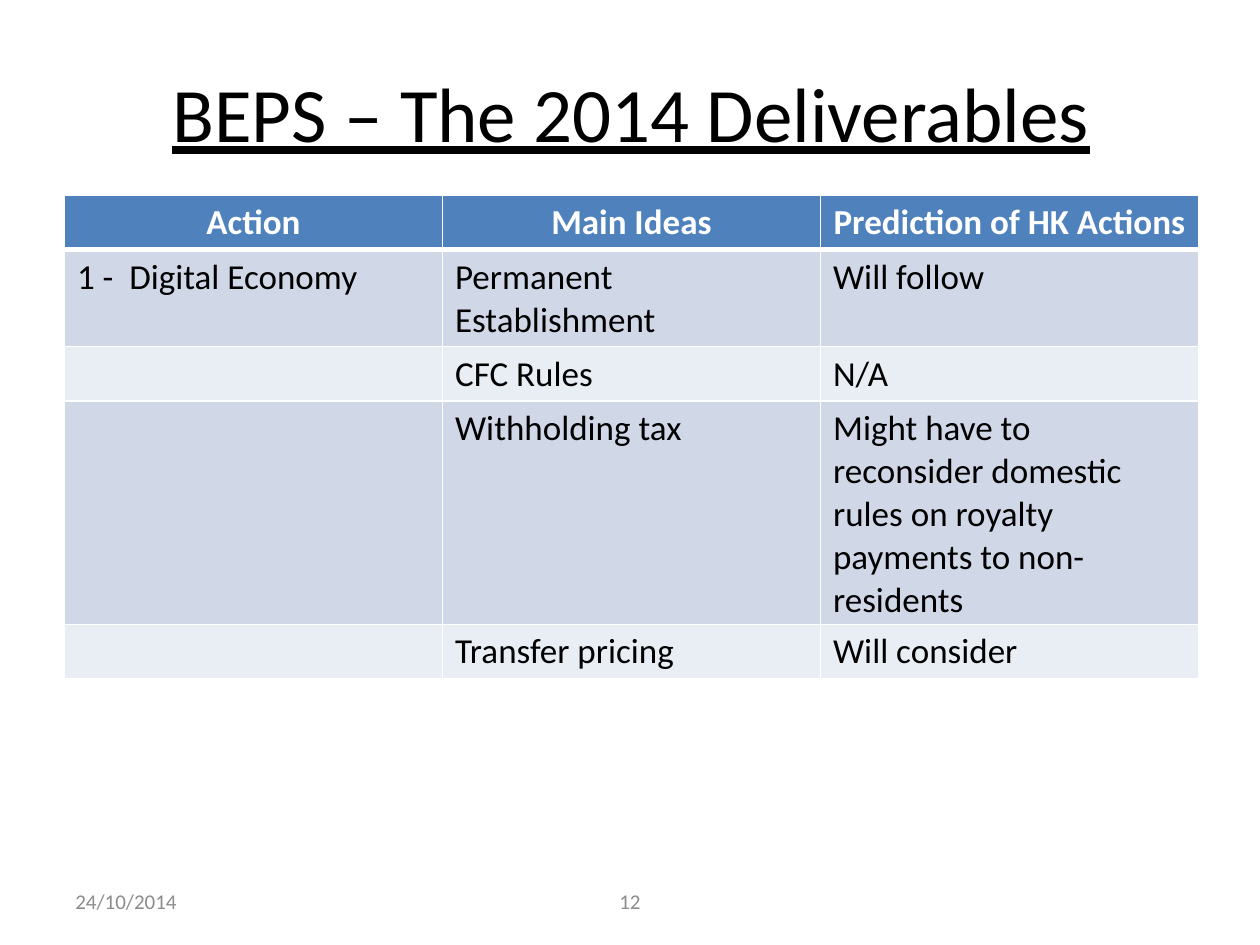
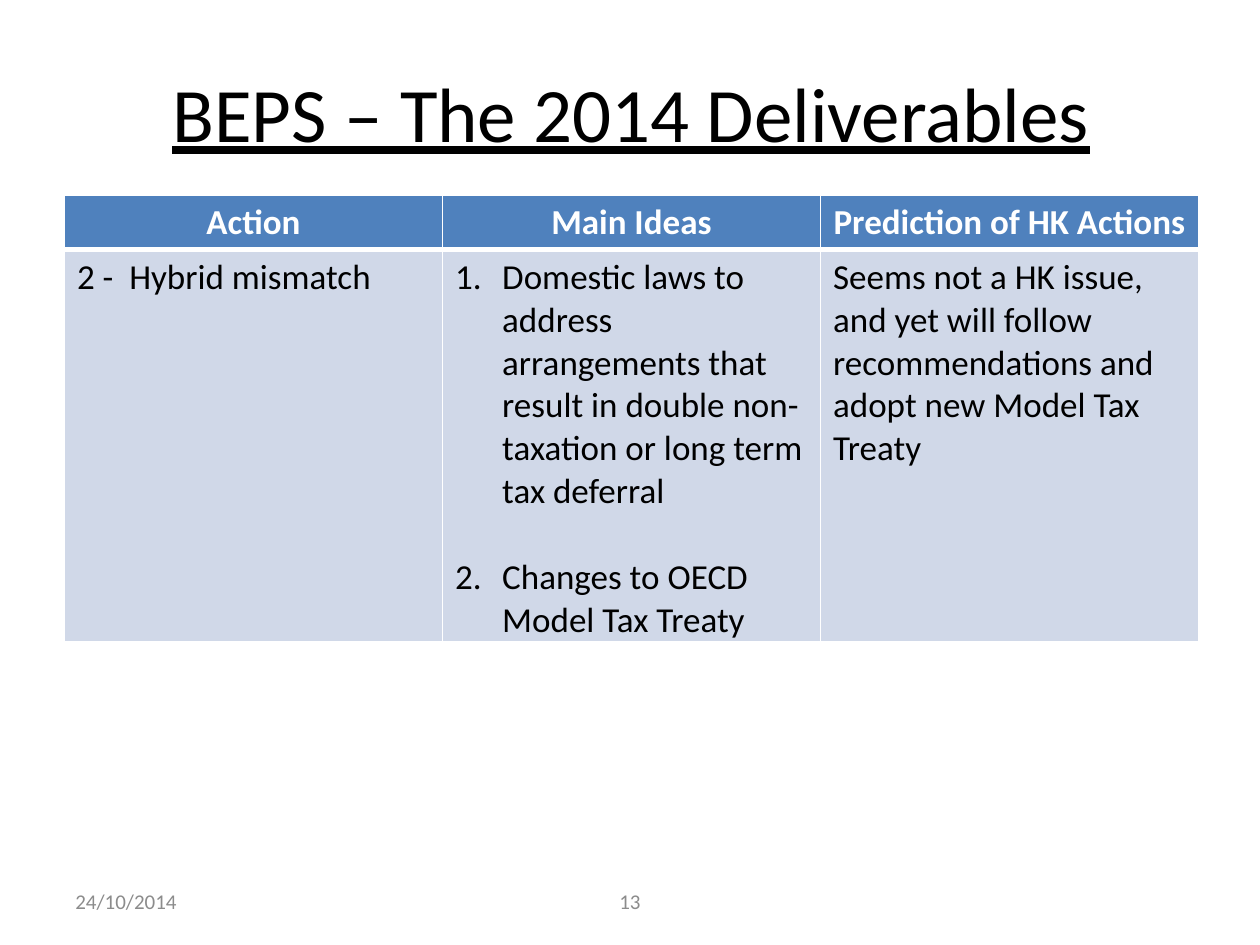
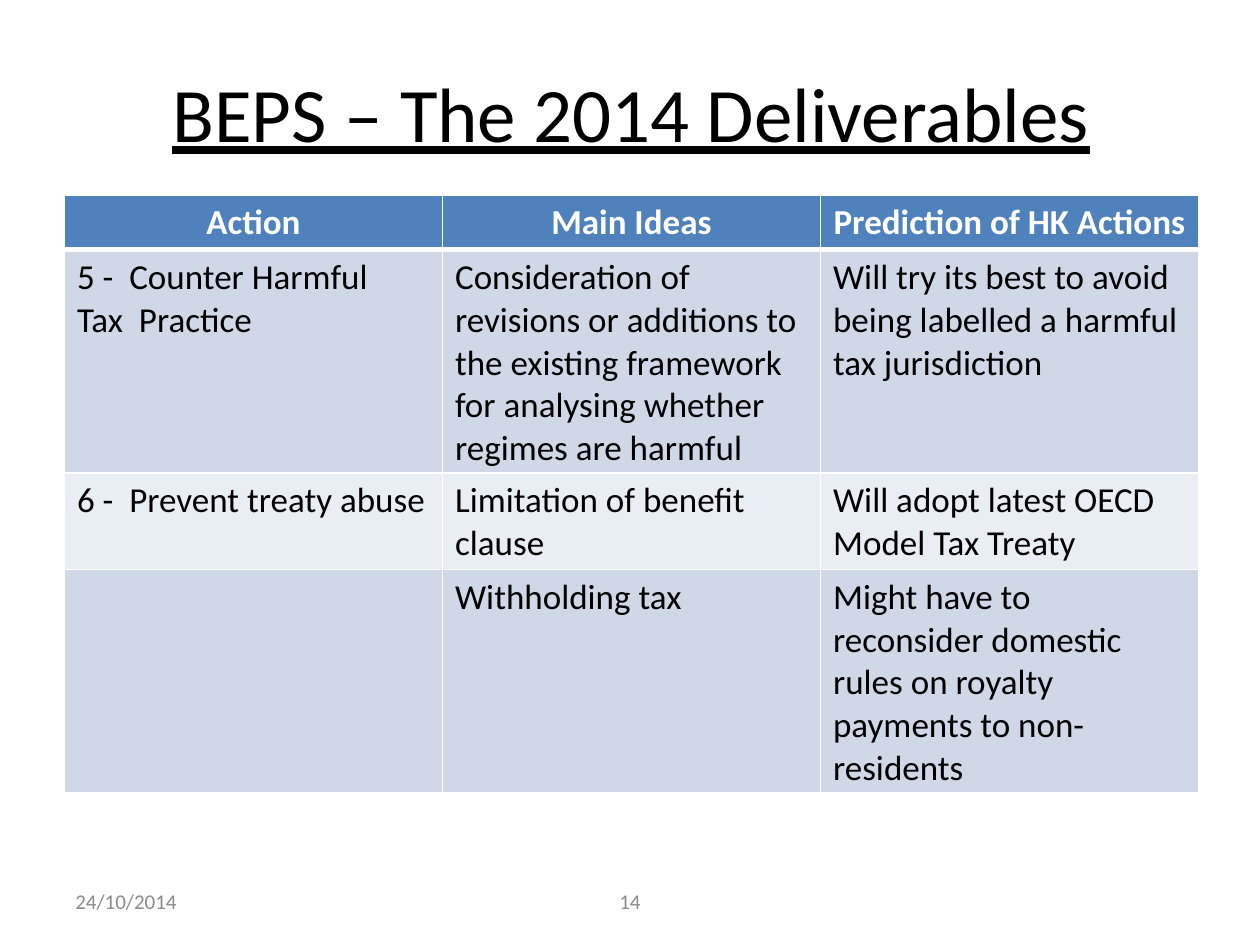
from lxml.etree import SubElement as Sub
from pptx import Presentation
from pptx.dml.color import RGBColor as Rgb
from pptx.enum.text import MSO_ANCHOR as Anchor, PP_ALIGN as Align
from pptx.oxml.ns import qn
from pptx.util import Cm, Pt

COLORS = {
    "text": "000000",
    "footer": "8C8C8C",
    "head": "4F81BD",
    "head_text": "FFFFFF",
    "border": "FFFFFF",
    "band_dark": "D0D8E8",
    "band_light": "E9EDF4",
}
FORMATS = {
    "title": {"size": Pt(44), "underline": True},
    "head": {"size": Pt(20), "bold": True},
    "body": {"size": Pt(20), "bold": False},
    "footer": {"size": Pt(12)},
}
FONT = "Calibri"
TITLE = "BEPS – The 2014 Deliverables"
DATE = "24/10/2014"
HEADINGS = ("Action", "Main Ideas", "Prediction of HK Actions")
ROYALTY = "Might have to reconsider domestic rules on royalty payments to non-residents"
FIRST_NUMBER = 12

PAGES = [
    [
        (2, "1 -  Digital Economy", "Permanent Establishment", "Will follow"),
        (1, "", "CFC Rules", "N/A"),
        (5, "", "Withholding tax", ROYALTY),
        (1, "", "Transfer pricing", "Will consider"),
    ],
    [
        (
            9,
            "2 -  Hybrid mismatch",
            [
                "Domestic laws to address arrangements that result in double "
                "non-taxation or long term tax deferral",
                "Changes to OECD Model Tax Treaty",
            ],
            "Seems not a HK issue, and yet will follow recommendations "
            "and adopt new Model Tax Treaty",
        ),
    ],
    [
        (
            5,
            "5 -  Counter Harmful\vTax  Practice",
            "Consideration of revisions or additions to the existing framework "
            "for analysing whether regimes are harmful",
            "Will try its best to avoid being labelled a harmful tax jurisdiction",
        ),
        (
            2,
            "6 -  Prevent treaty abuse",
            "Limitation of benefit clause",
            "Will adopt latest OECD Model Tax Treaty",
        ),
        (5, "", "Withholding tax", ROYALTY),
    ],
]


class DeckBuilder:
    def __init__(self):
        self.deck = Presentation()
        self.deck.slide_width = Cm(25.4)
        self.deck.slide_height = Cm(19.05)
        self.page = None

    def add_page(self):
        self.page = self.deck.slides.add_slide(self.deck.slide_layouts[6])

    def fill_para(self, para, text, style, color, align=Align.LEFT):
        para.text = text
        para.alignment = align
        for span in para.runs:
            span.font.name = FONT
            span.font.color.rgb = Rgb.from_string(COLORS[color])
            for name, value in FORMATS[style].items():
                setattr(span.font, name, value)

    def text(self, place, text, style, color, align=Align.LEFT, anchor=Anchor.MIDDLE):
        box = self.page.shapes.add_textbox(*map(Cm, place))
        frame = box.text_frame
        frame.word_wrap = True
        frame.vertical_anchor = anchor
        self.fill_para(frame.paragraphs[0], text, style, color, align)
        return box

    def title(self):
        box = self.text((1.3, 1.12, 22.86, 3.18), TITLE, "title", "text", Align.CENTER, Anchor.TOP)
        box.text_frame.margin_top = Cm(0.2)

    def footer(self, number):
        self.text((1.27, 17.65, 5.92, 1.02), DATE, "footer", "footer")
        self.text((0, 17.65, 25.4, 1.02), str(number), "footer", "footer", Align.CENTER)

    def borders(self, cell, top, bottom):
        for side, width in {"L": 1, "R": 1, "T": top, "B": bottom}.items():
            line = Sub(cell._tc.get_or_add_tcPr(), qn(f"a:ln{side}"), w=str(Pt(width)))
            fill = Sub(line, qn("a:solidFill"))
            Sub(fill, qn("a:srgbClr"), val=COLORS["border"])

    def numbered(self, frame, items):
        for index, item in enumerate(items):
            para = frame.add_paragraph() if index else frame.paragraphs[0]
            props = para._p.get_or_add_pPr()
            props.set("marL", str(Cm(0.95)))
            props.set("indent", str(-Cm(0.95)))
            Sub(props, qn("a:buFont"), typeface="+mj-lt")
            Sub(props, qn("a:buAutoNum"), type="arabicPeriod")
            if index:
                para.space_before = Pt(24.4)
            self.fill_para(para, item, "body", "text")

    def table(self, rows):
        lines = [(1, *HEADINGS), *rows]
        frame = self.page.shapes.add_table(
            len(lines), len(HEADINGS), Cm(1.3), Cm(3.93), Cm(22.86), Cm(1.1 * len(lines))
        )
        table = frame.table
        table.horz_banding = False
        for index, (count, *values) in enumerate(lines):
            table.rows[index].height = Cm(0.85 * count + 0.25)
            is_head = index == 0
            band = "head" if is_head else "band_dark" if index % 2 else "band_light"
            for cell, value in zip(table.rows[index].cells, values):
                self.borders(cell, 3 if index == 1 else 1, 3 if is_head else 1)
                cell.fill.solid()
                cell.fill.fore_color.rgb = Rgb.from_string(COLORS[band])
                para = cell.text_frame.paragraphs[0]
                if is_head:
                    self.fill_para(para, value, "head", "head_text", Align.CENTER)
                elif isinstance(value, list):
                    self.numbered(cell.text_frame, value)
                else:
                    self.fill_para(para, value, "body", "text")


def main():
    builder = DeckBuilder()
    for number, rows in enumerate(PAGES, FIRST_NUMBER):
        builder.add_page()
        builder.title()
        builder.table(rows)
        builder.footer(number)
    builder.deck.save("out.pptx")


if __name__ == "__main__":
    main()
